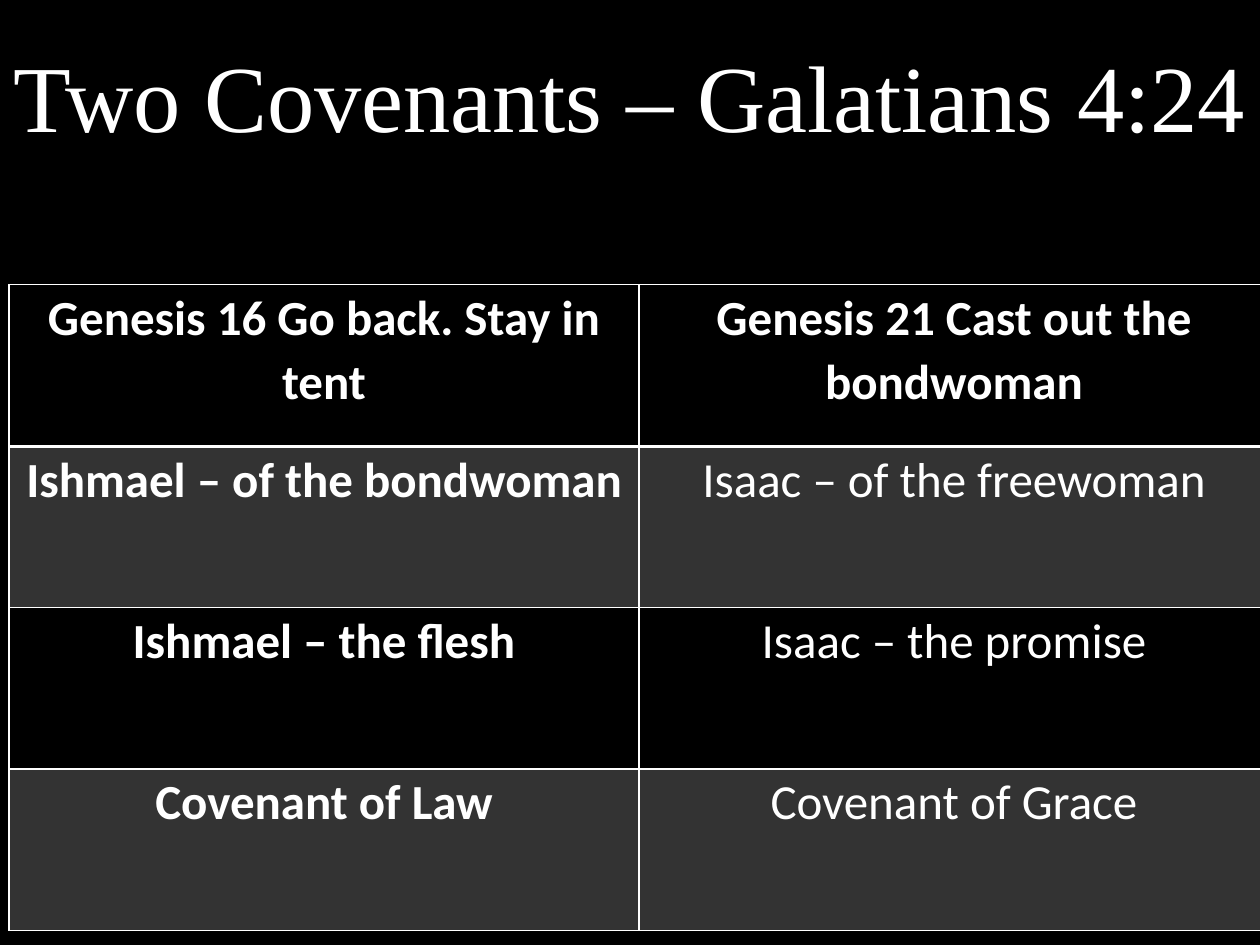
import pptx
import pptx.dml.color
import pptx.enum.text
import pptx.oxml.ns
import pptx.util
from lxml import etree
from pptx.util import Cm

WHITE = pptx.dml.color.RGBColor(0xFF, 0xFF, 0xFF)
BLACK = pptx.dml.color.RGBColor(0x00, 0x00, 0x00)

ROWS = [
    ("Genesis 16 Go back. Stay in tent", "Genesis 21 Cast out the bondwoman"),
    ("Ishmael – of the bondwoman", "Isaac – of the freewoman"),
    ("Ishmael – the flesh", "Isaac – the promise"),
    ("Covenant of Law", "Covenant of Grace"),
]


def add_element(parent, tag, **attrs):
    return etree.SubElement(parent, pptx.oxml.ns.qn(tag), **attrs)


def write_text(tf, text, font, size, spacing, bold=False):
    p = tf.paragraphs[0]
    p.alignment = pptx.enum.text.PP_ALIGN.CENTER
    p.line_spacing = spacing
    r = p.add_run()
    r.text = text
    r.font.name = font
    r.font.size = pptx.util.Pt(size)
    r.font.bold = bold
    r.font.color.rgb = WHITE


def set_borders(cell, widths):
    """Widths in points, in the order left, right, top, bottom."""
    tcPr = cell._tc.get_or_add_tcPr()
    for side, width in zip("LRTB", widths):
        ln = add_element(tcPr, f"a:ln{side}", w=str(pptx.util.Pt(width)))
        fill = add_element(ln, "a:solidFill")
        add_element(fill, "a:srgbClr", val=str(WHITE))


def set_fill(cell, shaded):
    if not shaded:
        cell.fill.background()
        return
    cell.fill.solid()
    cell.fill.fore_color.rgb = WHITE
    color = cell._tc.tcPr.find(pptx.oxml.ns.qn("a:solidFill"))[0]
    add_element(color, "a:alpha", val="20000")


def add_title(s, text):
    sp = s.shapes.title
    sp.left, sp.top, sp.width, sp.height = Cm(0), Cm(0), Cm(25.4), Cm(3.4)
    tf = sp.text_frame
    tf.word_wrap = True
    tf.auto_size = pptx.enum.text.MSO_AUTO_SIZE.NONE
    tf.vertical_anchor = pptx.enum.text.MSO_ANCHOR.MIDDLE
    tf.margin_top = Cm(0.84)
    write_text(tf, text, "Times New Roman", 54, 0.9)


def add_covenant_table(s):
    frame = s.shapes.add_table(len(ROWS), 2, Cm(0.18), Cm(5.74), Cm(25.4), Cm(13.02))
    table = frame.table
    table.first_row = False
    table.horz_banding = False
    for i, row in enumerate(ROWS):
        for j, text in enumerate(row):
            cell = table.cell(i, j)
            cell.margin_left = cell.margin_right = Cm(0.18)
            cell.margin_top = cell.margin_bottom = Cm(0)
            # Heavier rule under the header row
            set_borders(cell, (1, 1, 2 if i == 1 else 1, 2 if i == 0 else 1))
            set_fill(cell, shaded=i % 2 == 1)
            # Header row and first column are bold
            write_text(cell.text_frame, text, "Calibri", 28, 1.07, i == 0 or j == 0)


def main():
    prs = pptx.Presentation()
    prs.slide_width, prs.slide_height = Cm(25.4), Cm(19.05)
    s = prs.slides.add_slide(prs.slide_layouts[5])
    s.background.fill.solid()
    s.background.fill.fore_color.rgb = BLACK
    add_title(s, "Two Covenants – Galatians 4:24")
    add_covenant_table(s)
    prs.save("out.pptx")


if __name__ == "__main__":
    main()
